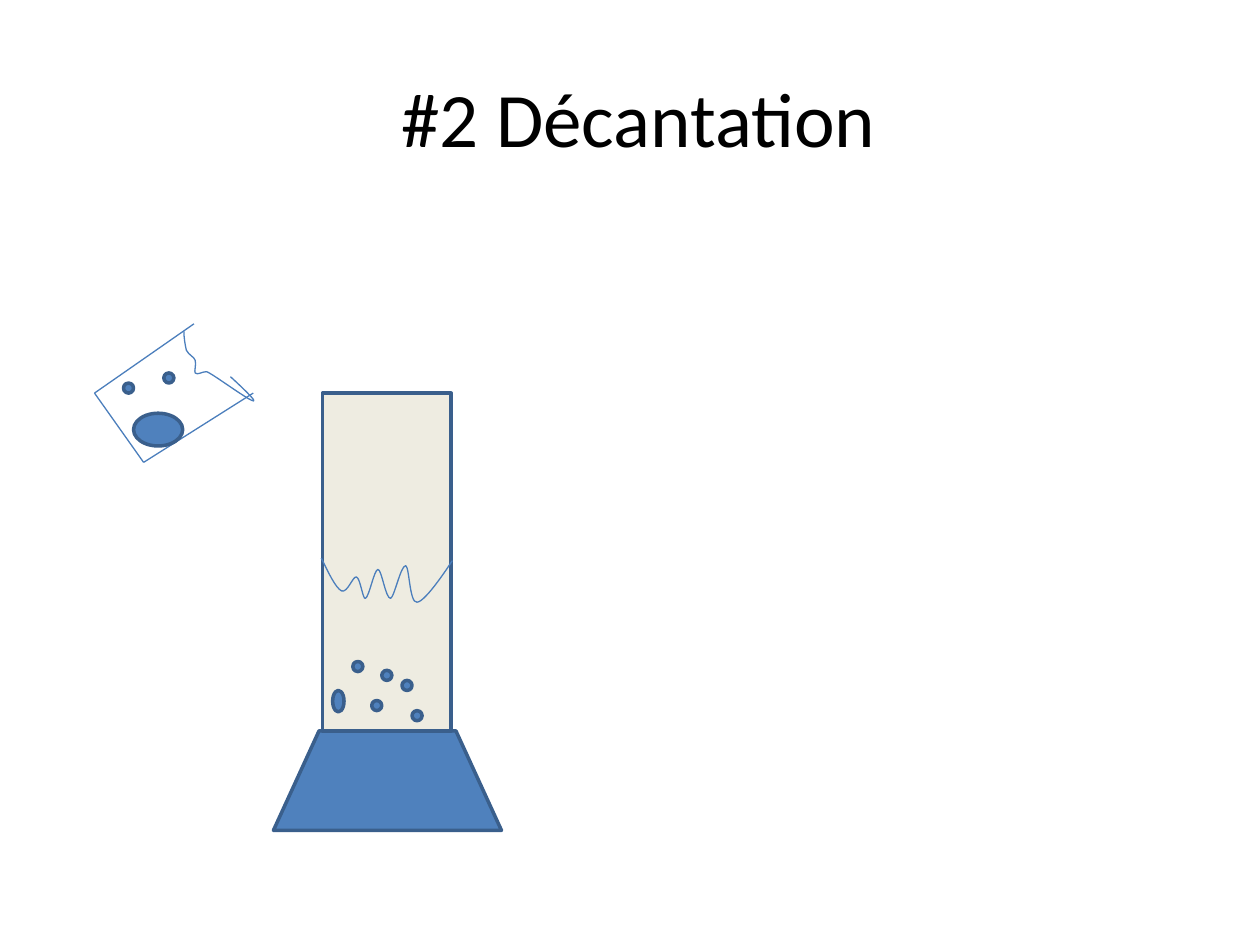
from lxml import etree
from pptx import Presentation
from pptx import util as u
from pptx.dml.color import RGBColor
from pptx.enum import shapes as s, text as t
from pptx.oxml.ns import qn

TITLE = " #2 Décantation"
BLUE, EDGE, THIN, SAND = "4F81BD", "3A5F8C", "4B7EBC", "EEECE1"
BEAKER = [(1.54, 2.57), (0.75, 3.12), (1.14, 3.67), (2.01, 3.12)]
DOT = 0.08
DOTS = [(1.3, 2.96), (0.98, 3.04), (2.8, 5.25), (3.03, 5.32),
        (3.19, 5.4), (3.27, 5.64), (2.95, 5.56)]
OVALS = [(1.06, 3.28, 0.39, 0.26), (2.64, 5.48, 0.09, 0.17)]
SPILL = [(1.46, 2.63),
         (1.46, 2.68), (1.47, 2.74), (1.48, 2.78),
         (1.5, 2.82), (1.54, 2.83), (1.55, 2.86),
         (1.56, 2.89), (1.54, 2.95), (1.55, 2.96),
         (1.57, 2.98), (1.6, 2.95), (1.64, 2.95),
         (1.69, 2.96), (2.32, 3.44), (1.83, 2.99)]
WAVE = [(2.55, 4.43),
        (2.61, 4.55), (2.66, 4.66), (2.71, 4.69),
        (2.76, 4.71), (2.8, 4.57), (2.83, 4.58),
        (2.86, 4.59), (2.88, 4.76), (2.9, 4.75),
        (2.93, 4.74), (2.97, 4.52), (3, 4.52),
        (3.03, 4.52), (3.06, 4.75), (3.1, 4.75),
        (3.13, 4.74), (3.18, 4.49), (3.22, 4.49),
        (3.25, 4.5), (3.25, 4.79), (3.31, 4.78),
        (3.38, 4.78), (3.59, 4.45), (3.59, 4.45)]


def color(code):
    return RGBColor.from_string(code)


def stroke(item, code, width):
    item.line.color.rgb = color(code)
    item.line.width = u.Pt(width)


def place(item, box):
    item.left, item.top, item.width, item.height = map(u.Inches, box)


def solid(kind, box, fill=BLUE):
    item = slide.shapes.add_shape(kind, *map(u.Inches, box))
    item.shadow.inherit = False
    item.fill.solid()
    item.fill.fore_color.rgb = color(fill)
    stroke(item, EDGE, 2)
    return item


def edge(start, end):
    item = slide.shapes.add_connector(
        s.MSO_CONNECTOR.STRAIGHT, *map(u.Inches, start + end))
    stroke(item, THIN, 0.75)
    etree.SubElement(item._element.spPr, qn("a:effectLst"))


def curve(knots):
    first, *rest = [(u.Inches(x), u.Inches(y)) for x, y in knots]
    pen = slide.shapes.build_freeform(*first, scale=1.0)
    pen.add_line_segments(rest, close=False)
    item = pen.convert_to_shape()
    lines = list(item._element.iter(qn("a:lnTo")))
    for i in range(0, len(lines), 3):
        bend = etree.Element(qn("a:cubicBezTo"))
        lines[i].addprevious(bend)
        for part in lines[i:i + 3]:
            bend.append(part[0])
            part.getparent().remove(part)
    item.shadow.inherit = False
    item.fill.background()
    stroke(item, THIN, 0.75)


deck = Presentation()
deck.slide_width, deck.slide_height = u.Inches(10), u.Inches(7.5)
slide = deck.slides.add_slide(deck.slide_layouts[5])

title = slide.shapes.title
place(title, (0.5, 0.3, 9, 1.25))
frame = title.text_frame
frame.text = TITLE
frame.vertical_anchor = t.MSO_ANCHOR.MIDDLE
line = frame.paragraphs[0]
line.alignment = t.PP_ALIGN.CENTER
font = line.runs[0].font
font.name, font.size = "Calibri", u.Pt(44)
font.color.rgb = color("000000")

KIND = s.MSO_SHAPE
base = solid(KIND.FLOWCHART_MANUAL_OPERATION, (2.17, 5.8, 1.81, 0.79))
base.rotation = 180
solid(KIND.RECTANGLE, (2.56, 3.12, 1.02, 2.68), SAND)
for start, end in zip(BEAKER, BEAKER[1:]):
    edge(start, end)
curve(SPILL)
for box in OVALS + [(x, y, DOT, DOT) for x, y in DOTS]:
    solid(KIND.FLOWCHART_CONNECTOR, box)
curve(WAVE)

deck.save("out.pptx")
